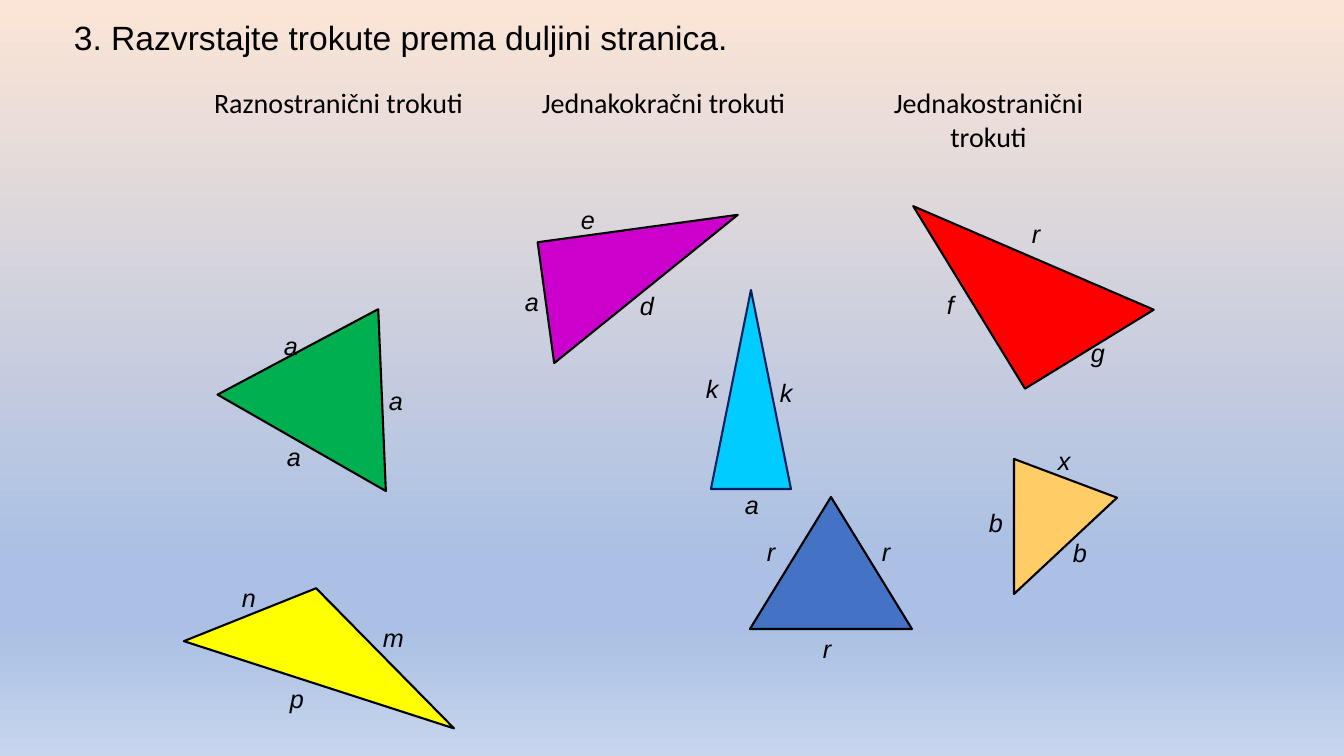
import copy
import pptx
import pptx.util
import pptx.oxml.ns
from pptx.dml.color import RGBColor
from pptx.enum.shapes import MSO_SHAPE
from pptx.enum.text import PP_ALIGN

PX = 914400 / 100.8
BLACK = RGBColor(0x00, 0x00, 0x00)
NAVY = RGBColor(0x00, 0x20, 0x60)
RED = RGBColor(0xFF, 0x00, 0x00)
PURPLE = RGBColor(0xCC, 0x00, 0xCC)
SAND = RGBColor(0xFF, 0xCC, 0x66)
YELLOW = RGBColor(0xFF, 0xFF, 0x00)
BLUE = RGBColor(0x44, 0x72, 0xC4)
GREEN = RGBColor(0x00, 0xB0, 0x50)
CYAN = RGBColor(0x00, 0xCC, 0xFF)
PEACH = RGBColor(0xFB, 0xE5, 0xD6)
SKY = RGBColor(0xAB, 0xC0, 0xE4)
PALE = RGBColor(0xC7, 0xD5, 0xED)


def emu(*lengths):
    return [round(n * PX) for n in lengths]


def add_text(shapes, text, box, size=18, font="Arial", italic=False, align=PP_ALIGN.LEFT):
    tf = shapes.add_textbox(*emu(*box)).text_frame
    tf.word_wrap = True
    p = tf.paragraphs[0]
    p.alignment = align
    r = p.add_run()
    r.text = text
    r.font.size = pptx.util.Pt(size)
    r.font.name = font
    r.font.italic = italic
    r.font.color.rgb = BLACK


prs = pptx.Presentation()
prs.slide_width, prs.slide_height = emu(1344, 756)
s = prs.slides.add_slide(prs.slide_layouts[6])

fill = s.background.fill
fill.gradient()
fill.gradient_angle = 270
gs_list = next(s._element.iter(pptx.oxml.ns.qn("a:gsLst")))
for _ in range(2):
    gs_list.append(copy.deepcopy(gs_list[0]))
stops = [(0, PEACH), (0.74, SKY), (0.83, SKY), (1, PALE)]
for stop, (position, color) in zip(fill.gradient_stops, stops):
    stop.position = position
    stop.color.rgb = color

RIGHT = MSO_SHAPE.RIGHT_TRIANGLE
ISO = MSO_SHAPE.ISOSCELES_TRIANGLE
triangles = [
    (RIGHT, (958, 151, 151, 214), 328.5, None, RED, BLACK, False,
     [("f", 937, 284), ("g", 1081, 332), ("r", 1022, 213)]),
    (RIGHT, (585, 188, 122, 202), 82.2, None, PURPLE, BLACK, True,
     [("d", 630, 285), ("a", 515, 281), ("e", 571, 199)]),
    (ISO, (998, 475, 135, 103), 90, 0.287, SAND, BLACK, True,
     [("b", 979, 502), ("x", 1048, 440), ("b", 1063, 532)]),
    (ISO, (191, 596, 284, 91), 17.9, 0.386, YELLOW, BLACK, True,
     [("n", 232, 577), ("m", 373, 617), ("p", 280, 678)]),
    (ISO, (750, 497, 162, 132), 0, 0.5, BLUE, BLACK, True,
     [("r", 757, 531), ("r", 872, 531), ("r", 813, 628)]),
    (ISO, (243, 299, 194, 154), 29.8, 0.5, GREEN, BLACK, True,
     [("a", 274, 325), ("a", 379, 380), ("a", 277, 436)]),
    (ISO, (711, 290, 80, 199), 0, 0.5, CYAN, NAVY, False,
     [("a", 735, 484), ("k", 770, 372), ("k", 696, 368)]),
]
for kind, box, rotation, apex, color, edge, labels_on_top, labels in triangles:
    group = s.shapes.add_group_shape()
    if not labels_on_top:
        for text, x, y in labels:
            add_text(group.shapes, text, (x, y, 36, 41), italic=True)
    sp = group.shapes.add_shape(kind, *emu(*box))
    sp.shadow.inherit = False
    sp.rotation = rotation
    if apex is not None:
        sp.adjustments[0] = apex
    sp.fill.solid()
    sp.fill.fore_color.rgb = color
    sp.line.color.rgb = edge
    sp.line.width = pptx.util.Pt(1.5)
    if labels_on_top:
        for text, x, y in labels:
            add_text(group.shapes, text, (x, y, 36, 41), italic=True)

headings = [
    ("Raznostranični trokuti", 202, 44),
    ("Jednakokračni trokuti", 527, 44),
    ("Jednakostranični trokuti", 852, 78),
]
for text, x, height in headings:
    add_text(s.shapes, text, (x, 81, 273, height), size=20, font="Calibri", align=PP_ALIGN.CENTER)

add_text(s.shapes, "3. Razvrstajte trokute prema duljini stranica.", (64, 12, 754, 50), size=24)

prs.save("out.pptx")
